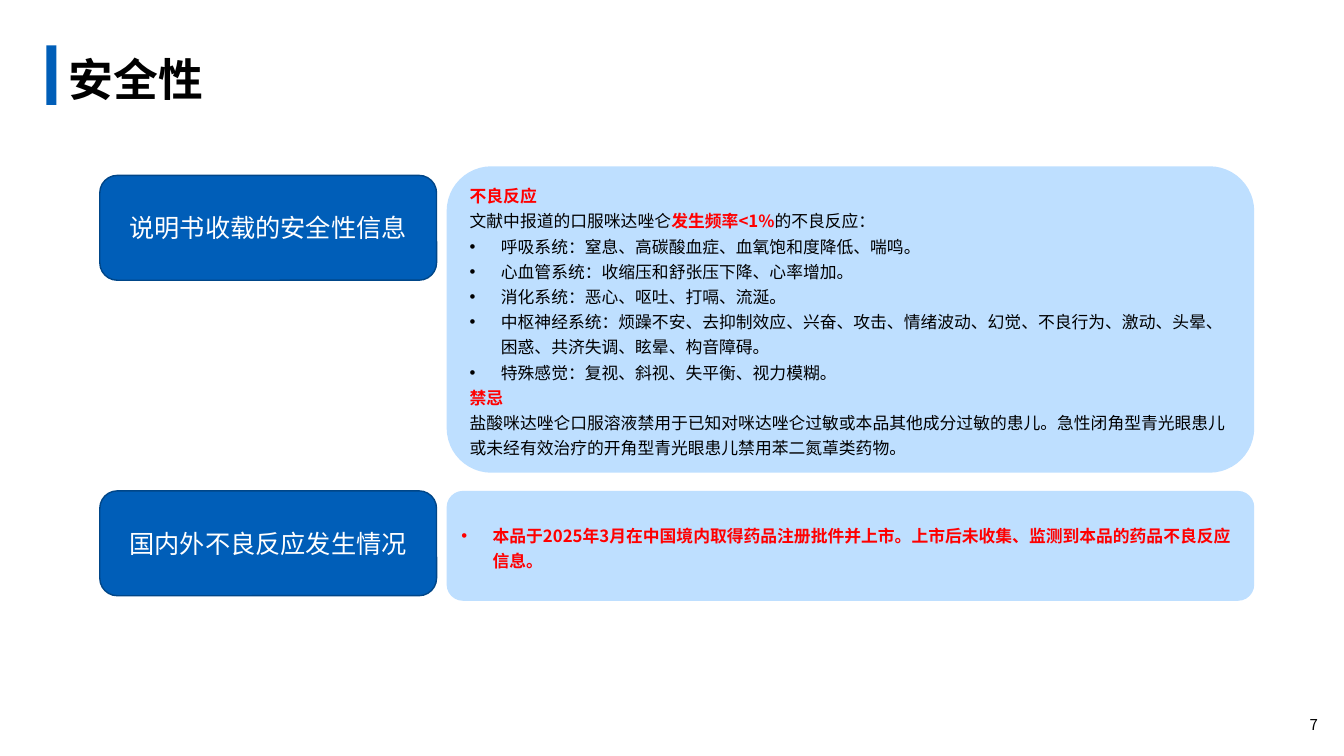
"""Build the drug safety slide: two labelled rows of rounded panels."""
from pptx import Presentation
from pptx.dml.color import RGBColor
from pptx.enum.shapes import MSO_SHAPE
from pptx.enum.text import MSO_ANCHOR, PP_ALIGN
from pptx.oxml.ns import qn
from pptx.util import Inches, Pt
from lxml import etree

RECT, ROUND = MSO_SHAPE.RECTANGLE, MSO_SHAPE.ROUNDED_RECTANGLE
MIDDLE = MSO_ANCHOR.MIDDLE
LEFT, CENTER, RIGHT = PP_ALIGN.LEFT, PP_ALIGN.CENTER, PP_ALIGN.RIGHT
BLUE, NAVY = RGBColor(0x00, 0x5E, 0xB8), RGBColor(0x00, 0x46, 0x88)
PALE, RED = RGBColor(0xBE, 0xDF, 0xFF), RGBColor(0xFF, 0x00, 0x00)
BLACK, WHITE = RGBColor(0, 0, 0), RGBColor(0xFF, 0xFF, 0xFF)
FONT, NUMBER_FONT = "Noto Sans CJK SC", "Noto Sans CJK JP"

TITLE, PAGE = "安全性", "7"
# Each paragraph: (bulleted, [(text, highlighted), ...])
REACTIONS = [
    (False, [("不良反应", True)]),
    (False, [("文献中报道的口服咪达唑仑", False), ("发生频率<1%", True), ("的不良反应：", False)]),
    (True, [("呼吸系统：窒息、高碳酸血症、血氧饱和度降低、喘鸣。", False)]),
    (True, [("心血管系统：收缩压和舒张压下降、心率增加。", False)]),
    (True, [("消化系统：恶心、呕吐、打嗝、流涎。", False)]),
    (True, [("中枢神经系统：烦躁不安、去抑制效应、兴奋、攻击、情绪波动、幻觉、不良行为、"
             "激动、头晕、困惑、共济失调、眩晕、构音障碍。", False)]),
    (True, [("特殊感觉：复视、斜视、失平衡、视力模糊。", False)]),
    (False, [("禁忌", True)]),
    (False, [("盐酸咪达唑仑口服溶液禁用于已知对咪达唑仑过敏或本品其他成分过敏的患儿。"
              "急性闭角型青光眼患儿或未经有效治疗的开角型青光眼患儿禁用苯二氮䓬类药物。", False)]),
]
MARKET = [(True, [("本品于2025年3月在中国境内取得药品注册批件并上市。"
                   "上市后未收集、监测到本品的药品不良反应信息。", True)])]
# Each row: label, label top, panel top, panel height, corner share, paragraphs
ROWS = [
    ("说明书收载的安全性信息", 1.74, 1.65, 3.04, 0.146, REACTIONS),
    ("国内外不良反应发生情况", 4.87, 4.87, 1.09, 0.148, MARKET),
]
LABEL_X, LABEL_W, LABEL_H = 0.99, 3.34, 1.04
PANEL_X, PANEL_W = LABEL_X + LABEL_W + 0.1, 8.01


def add_box(s, kind, left, top, width, height, fill, line=None):
    sp = s.shapes.add_shape(kind, *map(Inches, (left, top, width, height)))
    sp.shadow.inherit = False
    sp.fill.solid()
    sp.fill.fore_color.rgb = fill
    if line is None:
        sp.line.fill.background()
    else:
        sp.line.color.rgb = line
        sp.line.width = Pt(1)
    sp.text_frame.word_wrap = True
    sp.text_frame.vertical_anchor = MIDDLE
    return sp


def add_run(p, text, size, color, bold=False, name=FONT):
    r = p.add_run()
    r.text = text
    r.font.size, r.font.bold, r.font.name = Pt(size), bold, name
    r.font.color.rgb = color
    etree.SubElement(r.font._element, qn("a:ea")).set("typeface", name)


def add_bullet(p):
    pPr = p._p.get_or_add_pPr()
    indent = Inches(0.31)
    pPr.set("marL", str(indent))
    pPr.set("indent", str(-indent))
    etree.SubElement(pPr, qn("a:buFont")).set("typeface", "Arial")
    etree.SubElement(pPr, qn("a:buChar")).set("char", "•")


def fill_panel(tf, paragraphs):
    for i, (bulleted, runs) in enumerate(paragraphs):
        p = tf.add_paragraph() if i else tf.paragraphs[0]
        p.alignment = LEFT
        p.line_spacing = Pt(18)
        if bulleted:
            add_bullet(p)
        for text, marked in runs:
            add_run(p, text, 12, RED if marked else BLACK, marked)


def add_title(s):
    add_box(s, RECT, 0.46, 0.45, 0.1, 0.59, BLUE)
    sp = s.shapes.title
    sp.left, sp.top, sp.width, sp.height = map(Inches, (0.58, 0.45, 10.8, 0.65))
    tf = sp.text_frame
    tf.vertical_anchor = MIDDLE
    p = tf.paragraphs[0]
    p.alignment = LEFT
    add_run(p, TITLE, 32, BLACK, True)


def add_page_number(s):
    tf = s.shapes.add_textbox(*map(Inches, (12.53, 6.99, 0.67, 0.4))).text_frame
    tf.word_wrap = True
    tf.vertical_anchor = MIDDLE
    tf.margin_left = tf.margin_right = Inches(0.13)
    tf.margin_top = tf.margin_bottom = Inches(0.07)
    p = tf.paragraphs[0]
    p.alignment = RIGHT
    add_run(p, PAGE, 10.7, BLACK, name=NUMBER_FONT)


def main():
    prs = Presentation()
    prs.slide_width, prs.slide_height = Inches(13.33), Inches(7.5)
    s = prs.slides.add_slide(prs.slide_layouts[5])
    add_title(s)
    for label, label_top, top, height, corner, paragraphs in ROWS:
        sp = add_box(s, ROUND, LABEL_X, label_top, LABEL_W, LABEL_H, BLUE, NAVY)
        p = sp.text_frame.paragraphs[0]
        p.alignment = CENTER
        add_run(p, label, 18, WHITE)
        sp = add_box(s, ROUND, PANEL_X, top, PANEL_W, height, PALE)
        sp.adjustments[0] = corner
        fill_panel(sp.text_frame, paragraphs)
    add_page_number(s)
    prs.save("out.pptx")


if __name__ == "__main__":
    main()
